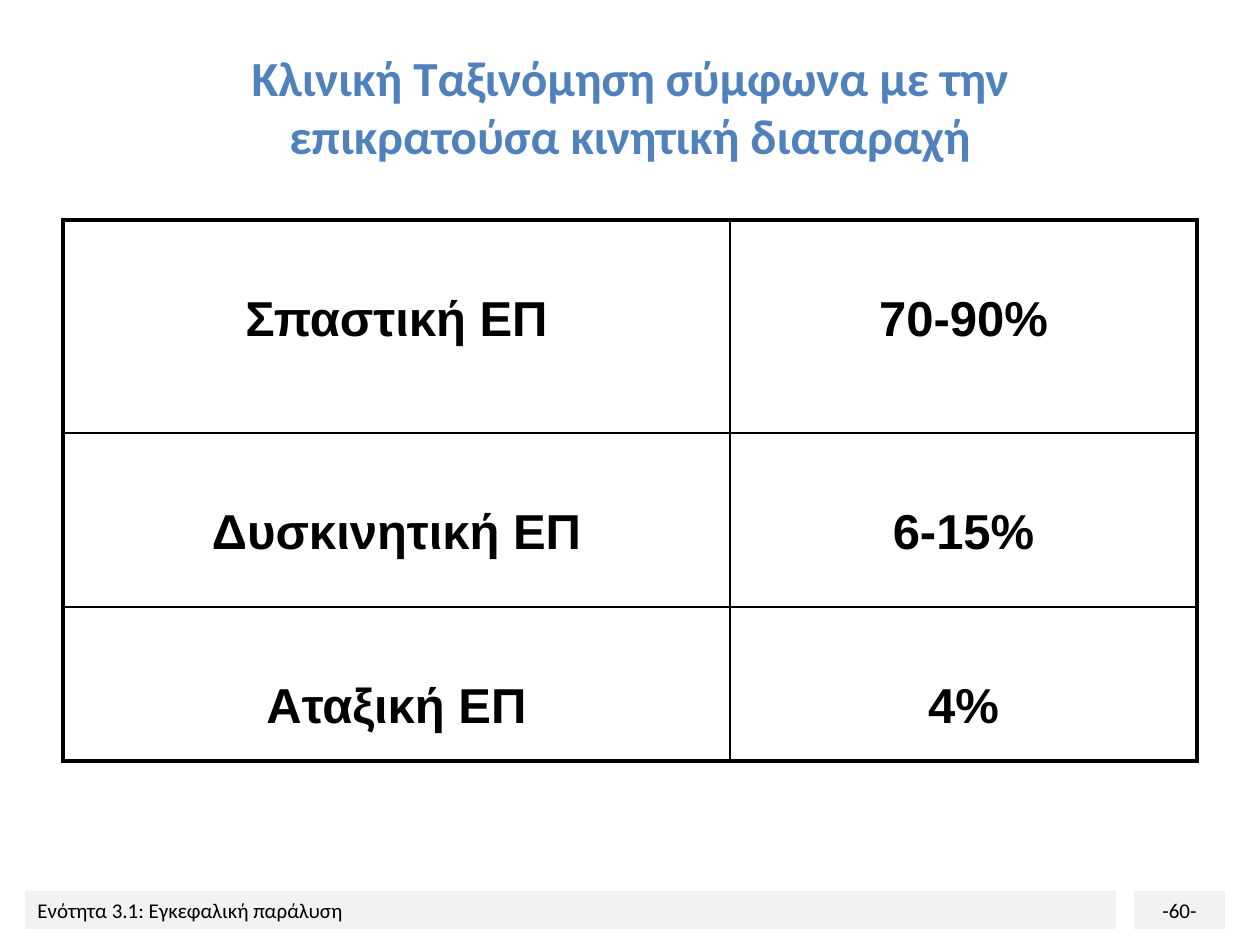
import pptx
import pptx.util
import pptx.dml.color
import pptx.enum.shapes
import pptx.enum.text
import pptx.oxml
import pptx.oxml.ns

RGB = pptx.dml.color.RGBColor
BLUE = RGB(0x4F, 0x81, 0xBD)
BLACK = RGB(0, 0, 0)
GREY = RGB(0xF2, 0xF2, 0xF2)
ALIGN = pptx.enum.text.PP_ALIGN
MIDDLE = pptx.enum.text.MSO_ANCHOR.MIDDLE
SCALE = 914400 / 126

TITLE = ["Κλινική Ταξινόμηση σύμφωνα με την", "επικρατούσα κινητική διαταραχή"]
ROWS = [("Σπαστική ΕΠ", "70-90%"), ("Δυσκινητική ΕΠ", "6-15%"), ("Αταξική ΕΠ", "4%")]
WIDTHS = [667, 467]
HEIGHTS = [213, 174, 154]
THICK, THIN = 2.25, 1


def px(num):
    return pptx.util.Emu(round(num * SCALE))


def write(para, text, font, size, color, bold=False):
    run = para.add_run()
    run.text = text
    run.font.name = font
    run.font.size = pptx.util.Pt(size)
    run.font.color.rgb = color
    run.font.bold = bold


def title(slide, box):
    frame = slide.shapes.add_textbox(*map(px, box)).text_frame
    frame.word_wrap = True
    frame.vertical_anchor = MIDDLE
    para = frame.paragraphs[0]
    para.alignment = ALIGN.CENTER
    for num, line in enumerate(TITLE):
        if num:
            para.add_line_break()
        write(para, line, "Calibri", 28, BLUE, True)


def border(cell, sides):
    """Draw the cell's edges; sides maps L, R, T, B, in that order, to points."""
    props = cell._tc.get_or_add_tcPr()
    for num, (side, width) in enumerate(sides.items()):
        line = pptx.oxml.parse_xml(
            f'<a:ln{side} {pptx.oxml.ns.nsdecls("a")} w="{pptx.util.Pt(width)}">'
            f'<a:solidFill><a:srgbClr val="{BLACK}"/></a:solidFill></a:ln{side}>')
        props.insert(num, line)


def grid(slide, box):
    rows, cols = len(ROWS), len(WIDTHS)
    table = slide.shapes.add_table(rows, cols, *map(px, box)).table
    table.first_row = table.horz_banding = False
    for col, width in zip(table.columns, WIDTHS):
        col.width = px(width)
    for r, height in enumerate(HEIGHTS):
        table.rows[r].height = px(height)
        for c, text in enumerate(ROWS[r]):
            cell = table.cell(r, c)
            cell.fill.background()
            cell.margin_left = cell.margin_right = px(18)
            cell.margin_top, cell.margin_bottom = px(72), px(6)
            para = cell.text_frame.paragraphs[0]
            para.alignment = ALIGN.CENTER
            write(para, text, "Arial", 28, BLACK, True)
            border(cell, {
                "L": THICK if c == 0 else THIN,
                "R": THICK if c == cols - 1 else THIN,
                "T": THICK if r == 0 else THIN,
                "B": THICK if r == rows - 1 else THIN})


def label(slide, box, text, align):
    """Place one grey footer bar."""
    bar = slide.shapes.add_shape(
        pptx.enum.shapes.MSO_SHAPE.RECTANGLE, *map(px, box))
    bar.shadow.inherit = False
    bar.fill.solid()
    bar.fill.fore_color.rgb = GREY
    bar.line.fill.background()
    frame = bar.text_frame
    frame.word_wrap = True
    frame.vertical_anchor = MIDDLE
    para = frame.paragraphs[0]
    para.alignment = align
    write(para, text, "Calibri", 12, BLACK)


def footer(slide, box):
    left, top, width, height = box
    page, gap = 91, 18
    label(slide, (left, top, width - page - gap, height),
          "Ενότητα 3.1: Εγκεφαλική παράλυση", ALIGN.LEFT)
    label(slide, (left + width - page, top, page, height), "-60-", ALIGN.CENTER)


def main():
    deck = pptx.Presentation()
    deck.slide_width, deck.slide_height = px(1260), px(945)
    slide = deck.slides.add_slide(deck.slide_layouts[6])
    footer(slide, (25, 891, 1200, 38))
    title(slide, (63, 38, 1134, 136))
    grid(slide, (63, 220, sum(WIDTHS), sum(HEIGHTS)))
    deck.save("out.pptx")


if __name__ == "__main__":
    main()
